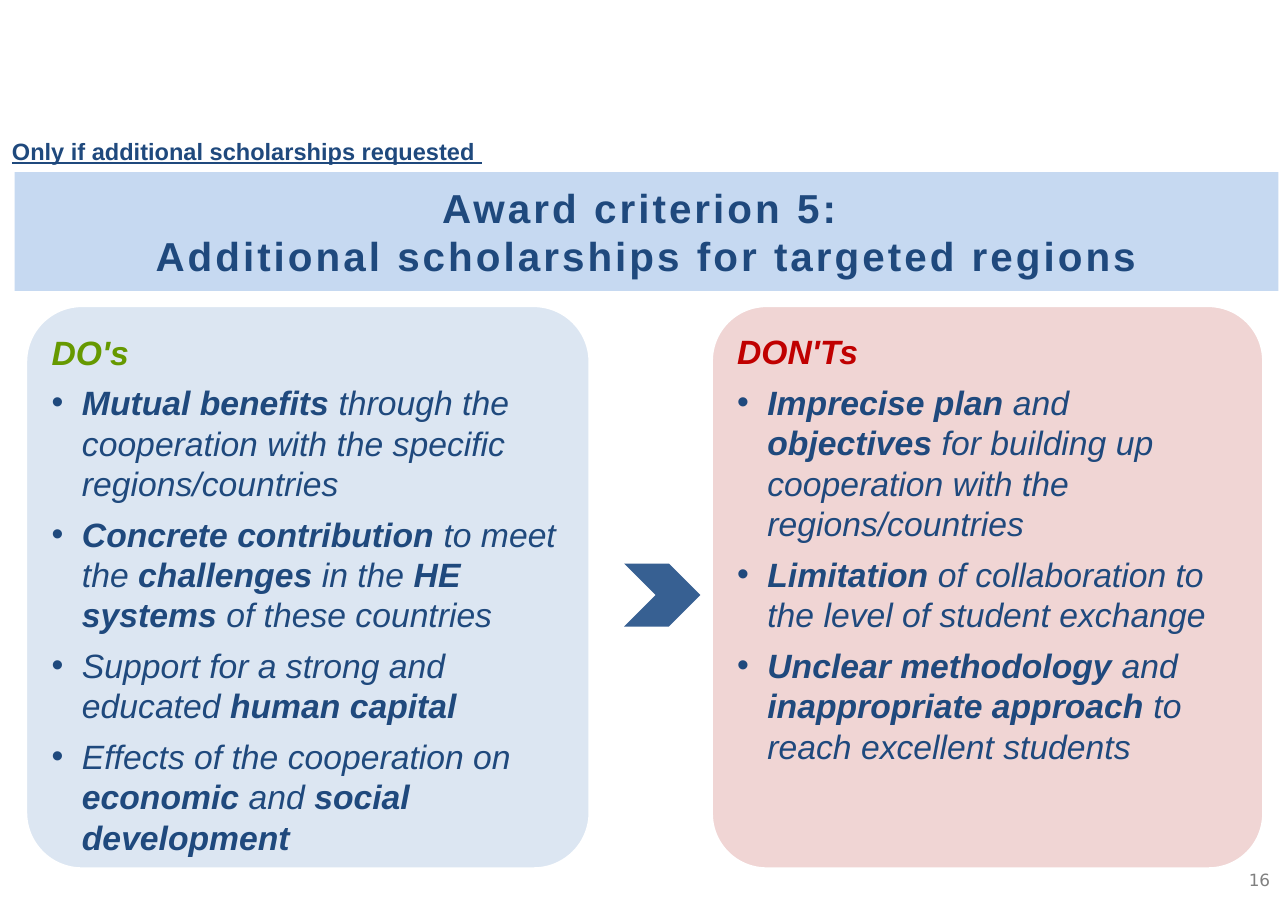
from dataclasses import dataclass

from lxml import etree
from pptx import Presentation
from pptx import util as u
from pptx.dml import color
from pptx.enum import shapes, text
from pptx.oxml import ns


@dataclass(frozen=True)
class Theme:
    navy: str = "1F497D"
    band: str = "C6D9F1"
    blue: str = "DCE6F2"
    pink: str = "E6B9B8"
    arrow: str = "376092"
    green: str = "669900"
    red: str = "C00000"
    gray: str = "808080"
    white: str = "FFFFFF"
    font: str = "Arial"
    plain: str = "DejaVu Sans"
    head: int = 24
    body: int = 20
    note: int = 14
    tiny: int = 10


T = Theme()
WIDE, HIGH = u.Inches(10.63), u.Inches(7.5)
PAD = 0.08

DOS = (
    "*Mutual benefits* through the cooperation with the specific regions/countries",
    "*Concrete contribution* to meet the *challenges* in the *HE systems* of these countries",
    "Support for a strong and educated *human capital*",
    "Effects of the cooperation on *economic* and *social development*",
)
DONTS = (
    "*Imprecise plan* and *objectives* for building up cooperation with the regions/countries",
    "*Limitation *of collaboration to the level of student exchange",
    "*Unclear methodology *and *inappropriate approach *to reach excellent students",
)


def area(x, y, w, h):
    """Turn percentages of the slide into a box."""
    return (int(WIDE * x / 100), int(HIGH * y / 100),
            int(WIDE * w / 100), int(HIGH * h / 100))


def rgb(code):
    return color.RGBColor.from_string(code)


def paint(shape, code):
    shape.fill.solid()
    shape.fill.fore_color.rgb = rgb(code)


def add_run(para, words, size, code, bold=False, italic=False, face=T.font):
    run = para.add_run()
    run.text = words
    font = run.font
    font.name, font.size, font.bold, font.italic = face, u.Pt(size), bold, italic
    font.color.rgb = rgb(code)
    return run


def inset(frame, side, edge):
    frame.margin_left = frame.margin_right = u.Inches(side)
    frame.margin_top = frame.margin_bottom = u.Inches(edge)
    frame.word_wrap = True


def add_form(slide, kind, box, code):
    shape = slide.shapes.add_shape(kind, *box)
    shape.shadow.inherit = False
    paint(shape, code)
    shape.line.fill.background()
    return shape


def add_text(slide, box):
    frame = slide.shapes.add_textbox(*box).text_frame
    frame.word_wrap = True
    return frame


def add_bullet(para):
    props = para._p.get_or_add_pPr()
    props.set("marL", str(u.Inches(0.25)))
    props.set("indent", str(-u.Inches(0.25)))
    etree.SubElement(props, ns.qn("a:buFont"), typeface=T.font)
    etree.SubElement(props, ns.qn("a:buChar"), char="•")


# Title band
def add_title(slide, box):
    title = slide.shapes.title
    title.left, title.top, title.width, title.height = box
    geom = etree.SubElement(title._element.spPr, ns.qn("a:prstGeom"), prst="roundRect")
    etree.SubElement(geom, ns.qn("a:avLst"))
    paint(title, T.band)
    frame = title.text_frame
    inset(frame, PAD, PAD / 2)
    frame.auto_size = text.MSO_AUTO_SIZE.NONE
    frame.vertical_anchor = text.MSO_ANCHOR.MIDDLE
    lines = ("Award criterion 5: ", "Additional scholarships for targeted regions")
    for i, line in enumerate(lines):
        para = frame.add_paragraph() if i else frame.paragraphs[0]
        para.alignment = text.PP_ALIGN.CENTER
        run = add_run(para, line, T.head, T.navy, bold=True)
        run._r.get_or_add_rPr().set("spc", "180")


# Condition above the band
def add_note(slide, box):
    para = add_text(slide, box).paragraphs[0]
    run = add_run(para, "Only if additional scholarships requested ", T.note, T.navy, bold=True)
    run.font.underline = True


# Panel with a heading and bullets; asterisks enclose bold words
def add_panel(slide, box, back, head, tint, items, alpha=100):
    panel = add_form(slide, shapes.MSO_SHAPE.ROUNDED_RECTANGLE, box, back)
    panel.adjustments[0] = 0.1
    panel.line.color.rgb = rgb(T.white)
    panel.line.width = u.Pt(2)
    if alpha < 100:
        tone = panel._element.spPr.find(ns.qn("a:solidFill"))[0]
        etree.SubElement(tone, ns.qn("a:alpha"), val=str(alpha * 1000))
    frame = panel.text_frame
    inset(frame, PAD, PAD)
    frame.vertical_anchor = text.MSO_ANCHOR.TOP
    add_run(frame.paragraphs[0], head, T.body, tint, bold=True, italic=True)
    for item in items:
        para = frame.add_paragraph()
        add_bullet(para)
        for i, part in enumerate(item.split("*")):
            if part:
                add_run(para, part, T.body, T.navy, bold=i % 2 == 1, italic=True)
    for para in frame.paragraphs:
        para.alignment = text.PP_ALIGN.LEFT
        para.space_after = u.Pt(6)


# Page number
def add_page(slide, box):
    frame = add_text(slide, box)
    frame.vertical_anchor = text.MSO_ANCHOR.MIDDLE
    para = frame.paragraphs[0]
    para.alignment = text.PP_ALIGN.CENTER
    add_run(para, "16", T.tiny, T.gray, face=T.plain)


def main():
    deck = Presentation()
    deck.slide_width, deck.slide_height = WIDE, HIGH
    slide = deck.slides.add_slide(deck.slide_layouts[5])
    add_title(slide, area(1.13, 18.93, 98.12, 13.07))
    add_note(slide, area(0, 14.4, 45.53, 4.53))
    add_panel(slide, area(1.98, 33.6, 43.84, 62), T.blue, "DO's", T.green, DOS)
    add_form(slide, shapes.MSO_SHAPE.CHEVRON, area(48.45, 62, 5.93, 6.93), T.arrow)
    add_panel(slide, area(55.22, 33.6, 42.9, 62), T.pink, "DON'Ts", T.red, DONTS, alpha=60)
    add_page(slide, area(95.48, 93.73, 4.61, 6.13))
    deck.save("out.pptx")


if __name__ == "__main__":
    main()
